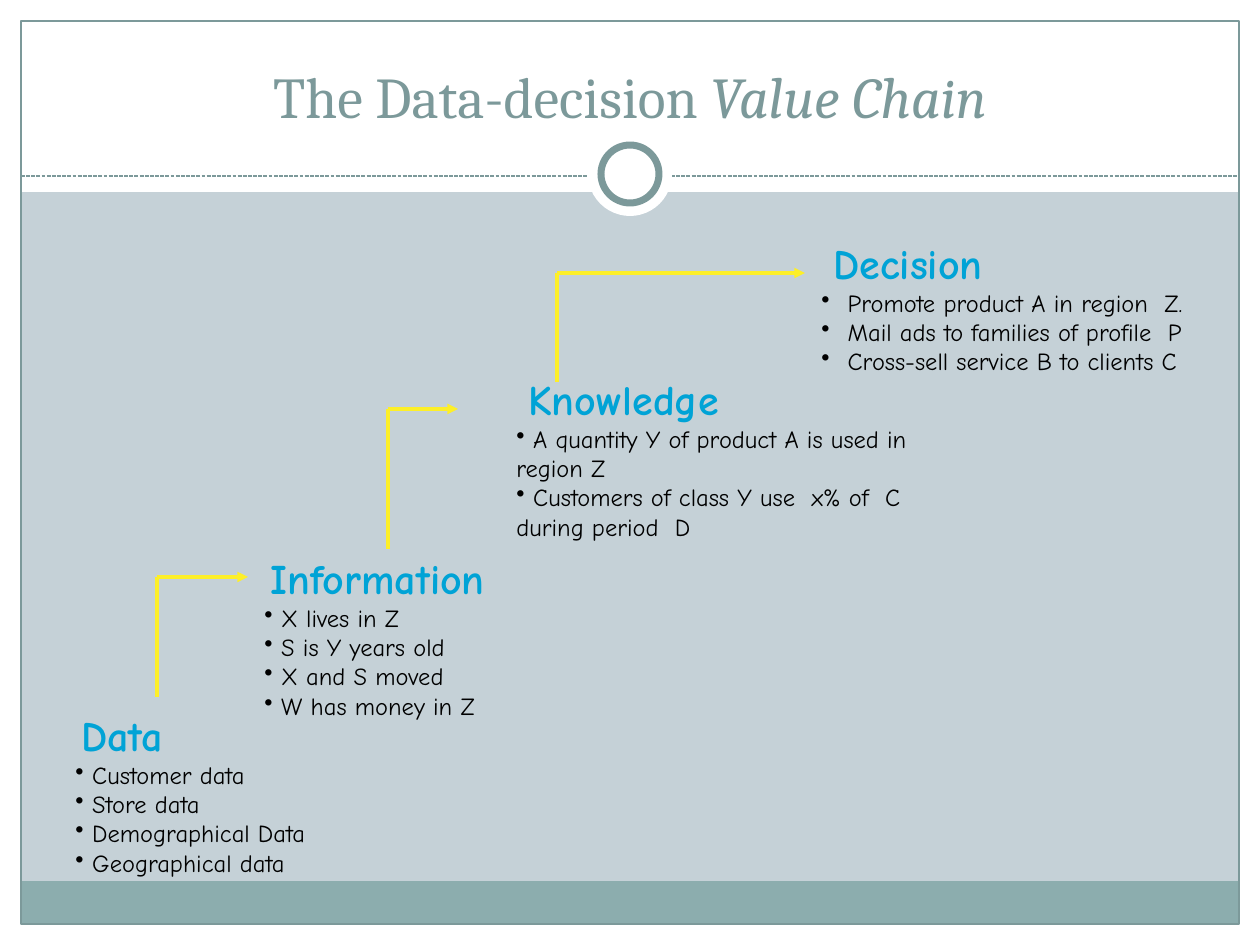
"""Builds the slide on the data-decision value chain, a staircase of four steps."""
from lxml import etree
from pptx import Presentation
from pptx import util as u
from pptx.dml.color import RGBColor
from pptx.enum import dml, shapes, text
from pptx.oxml.ns import qn

WHITE = RGBColor(0xFF, 0xFF, 0xFF)
BLACK = RGBColor(0x00, 0x00, 0x00)
MIST = RGBColor(0xC5, 0xD1, 0xD7)
TEAL = RGBColor(0x8C, 0xAD, 0xAE)
SLATE = RGBColor(0x7C, 0x99, 0x9A)
BLUE = RGBColor(0x00, 0xA3, 0xD6)
YELLOW = RGBColor(0xFD, 0xEF, 0x28)

W, H, EDGE = 1260, 945, 21
RECT, OVAL = shapes.MSO_SHAPE.RECTANGLE, shapes.MSO_SHAPE.OVAL
TITLE = [("The Data-decision ", False), ("Value Chain", True)]
TITLE_FONT = {"name": "Cambria", "size": u.Pt(33)}
HEAD_FONT = {"name": "Comic Neue", "size": u.Pt(24), "bold": True}
BODY_FONT = {"name": "Comic Neue", "size": u.Pt(14), "bold": False}

BANDS = [
    (0, H - EDGE, W, EDGE, WHITE),
    (0, 0, W, 192, WHITE),
    (0, 0, EDGE, H, WHITE),
    (W - EDGE, 0, EDGE, H, WHITE),
    (EDGE, 881, W - 2 * EDGE, 43, TEAL),
]
RING_CENTRE = (630, 174)

STEPS = [
    {"head": "Data", "box": (63, 703, 280, 180), "indent": 6, "hang": 0,
     "items": ["Customer data", "Store data", "Demographical Data",
               "Geographical data"]},
    {"head": "Information", "box": (252, 546, 354, 180), "indent": 6, "hang": 0,
     "items": ["X lives in Z", "S is Y years old", "X and S moved",
               "W has money in Z"]},
    {"head": "Knowledge", "box": (504, 367, 427, 180), "indent": 12, "hang": 0,
     "items": ["A quantity Y of product A is used in region Z",
               "Customers of class Y use  x% of  C during period  D"]},
    {"head": "Decision", "box": (809, 231, 420, 150), "indent": 12, "hang": 18,
     "items": ["Promote product A in region  Z.",
               "Mail ads to families of profile  P",
               "Cross-sell service B to clients C"]},
]
ELBOWS = [(157, 697, 577, 248), (388, 549, 409, 458), (557, 382, 273, 805)]


def px(n):
    return u.Emu(round(n * 914400 / 126))


def add_run(p, words, color, font):
    r = p.add_run()
    r.text = words
    r.font.color.rgb = color
    for name, value in font.items():
        setattr(r.font, name, value)


def add_block(s, kind, box, fill=None, line=None, width=0.75):
    sp = s.shapes.add_shape(kind, *map(px, box))
    sp.shadow.inherit = False
    if fill is None:
        sp.fill.background()
    else:
        sp.fill.solid()
        sp.fill.fore_color.rgb = fill
    if line is None:
        sp.line.fill.background()
    else:
        sp.line.color.rgb = line
        sp.line.width = u.Pt(width)


def add_line(s, start, end, color, width, dash=None, arrow=False):
    c = s.shapes.add_connector(shapes.MSO_CONNECTOR.STRAIGHT,
                               *map(px, start + end))
    c.line.color.rgb = color
    c.line.width = u.Pt(width)
    if dash:
        c.line.dash_style = dash
    if arrow:
        etree.SubElement(c.line._get_or_add_ln(), qn("a:tailEnd"),
                         type="triangle")
    etree.SubElement(c._element.spPr, qn("a:effectLst"))


def set_indent(p, left, first=0):
    pPr = p._p.get_or_add_pPr()
    pPr.set("marL", str(px(left)))
    pPr.set("indent", str(px(first)))
    return pPr


def add_step(s, step):
    tf = s.shapes.add_textbox(*map(px, step["box"])).text_frame
    tf.word_wrap = True
    p = tf.paragraphs[0]
    set_indent(p, step["indent"])
    add_run(p, step["head"], BLUE, HEAD_FONT)
    for item in step["items"]:
        p = tf.add_paragraph()
        pPr = set_indent(p, step["hang"], -step["hang"])
        etree.SubElement(pPr, qn("a:buChar"), char="•")
        add_run(p, " " + item, BLACK, BODY_FONT)


def add_frame(s):
    for *box, fill in BANDS:
        add_block(s, RECT, box, fill)
    add_block(s, RECT, (EDGE, EDGE, W - 2 * EDGE, H - 2 * EDGE), line=SLATE)
    add_line(s, (EDGE, 176), (W - EDGE, 176), SLATE, 0.75,
             dash=dml.MSO_LINE.SQUARE_DOT)
    x, y = RING_CENTRE
    for radius, line in ((42, None), (29, SLATE)):
        box = (x - radius, y - radius, 2 * radius, 2 * radius)
        add_block(s, OVAL, box, WHITE, line, 4)


def add_title(s):
    sp = s.shapes.title
    sp.left, sp.top, sp.width, sp.height = map(px, (42, 32, 1176, 104))
    s.shapes._spTree.append(sp._element)
    tf = sp.text_frame
    tf.vertical_anchor = text.MSO_ANCHOR.BOTTOM
    p = tf.paragraphs[0]
    p.alignment = text.PP_ALIGN.CENTER
    for words, italic in TITLE:
        add_run(p, words, SLATE, {**TITLE_FONT, "italic": italic})


def main():
    prs = Presentation()
    prs.slide_width, prs.slide_height = px(W), px(H)
    s = prs.slides.add_slide(prs.slide_layouts[5])
    s.background.fill.solid()
    s.background.fill.fore_color.rgb = MIST
    add_frame(s)
    add_title(s)
    for step in STEPS:
        add_step(s, step)
    for x, bottom, top, right in ELBOWS:
        add_line(s, (x, bottom), (x, top), YELLOW, 2)
        add_line(s, (x, top), (right, top), YELLOW, 2, arrow=True)
    prs.save("out.pptx")


if __name__ == "__main__":
    main()
